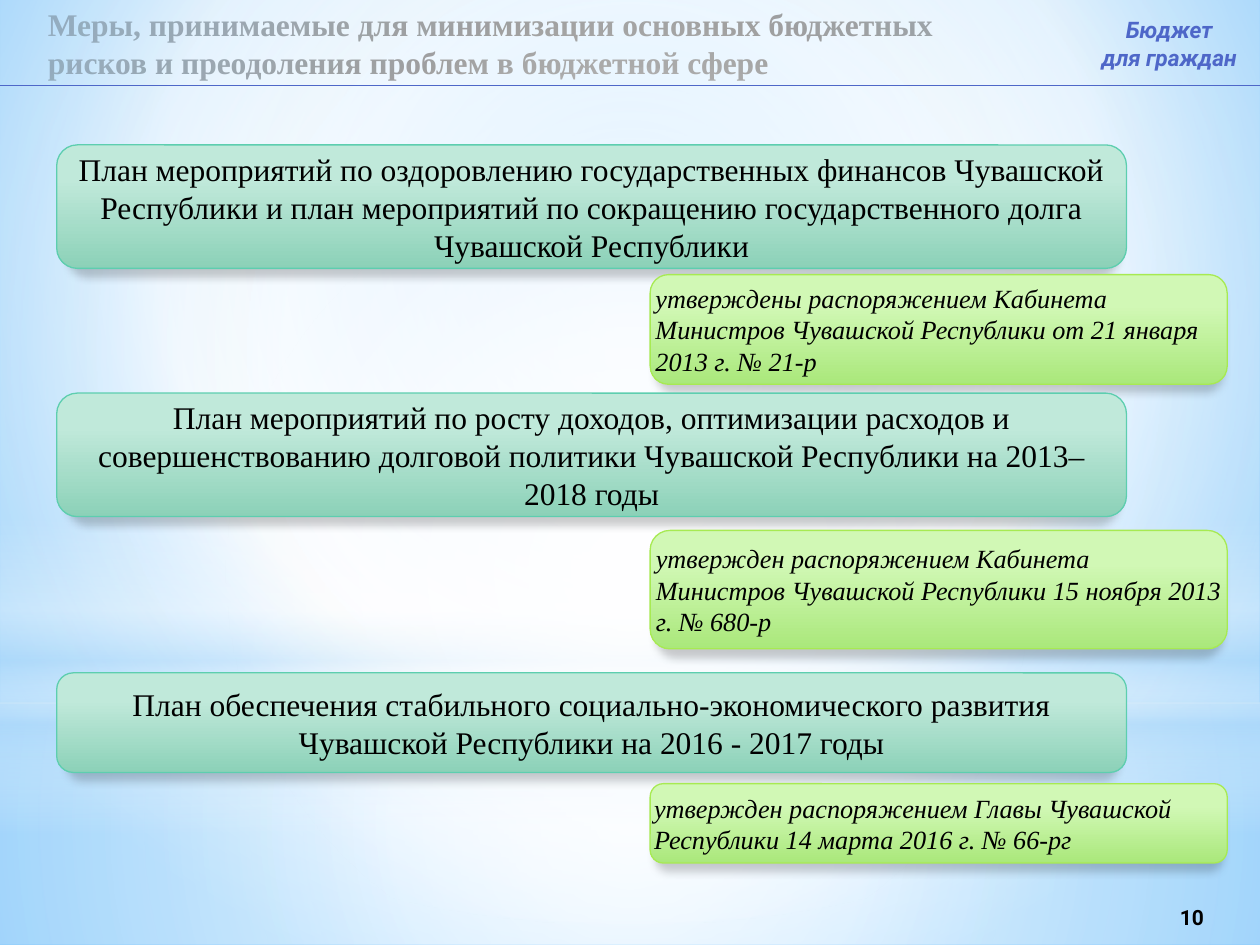
from lxml import etree
from pptx import Presentation
from pptx import util as u
from pptx.dml.color import RGBColor
from pptx.enum import shapes, text
from pptx.oxml import ns

BLACK = RGBColor(0, 0, 0)
INDIGO = RGBColor(0x4E, 0x67, 0xC8)
SKY = RGBColor(0x9E, 0xD5, 0xFF)
DEEP_SKY = RGBColor(0x5B, 0xB9, 0xFF)
WHITE = RGBColor(0xFF, 0xFF, 0xFF)
HAZE = RGBColor(0xB4, 0xDC, 0xFA)
MINT = RGBColor(0xC0, 0xE9, 0xDA)
DEEP_MINT = RGBColor(0x8C, 0xD1, 0xB8)
MINT_EDGE = RGBColor(0x5D, 0xCE, 0xAF)
LIME = RGBColor(0xD1, 0xF8, 0xB5)
DEEP_LIME = RGBColor(0xAA, 0xE8, 0x7B)
LIME_EDGE = RGBColor(0xA7, 0xEA, 0x52)

SERIF = "Times New Roman"
SANS = "Roboto"
RECT = shapes.MSO_SHAPE.RECTANGLE
ROUNDED = shapes.MSO_SHAPE.ROUNDED_RECTANGLE
OVAL = shapes.MSO_SHAPE.OVAL
CENTER = text.PP_ALIGN.CENTER
LEFT = text.PP_ALIGN.LEFT
MIDDLE = text.MSO_ANCHOR.MIDDLE
TOP = text.MSO_ANCHOR.TOP
CENTRAL = (50, 50, 50, 50)

PLAN_LEFT, PLAN_WIDTH = 0.45, 8.49
APPROVAL_LEFT, APPROVAL_WIDTH = 5.16, 4.58
MEASURES = [
    (1.15, 0.98, "План мероприятий по оздоровлению государственных финансов Чувашской "
     "Республики и план мероприятий по сокращению государственного долга Чувашской Республики",
     2.18, 0.87, "утверждены распоряжением Кабинета Министров Чувашской Республики "
     "от 21 января 2013 г. № 21-р"),
    (3.12, 0.98, "План мероприятий по росту доходов, оптимизации расходов и "
     "совершенствованию долговой политики Чувашской Республики на 2013–2018 годы",
     4.21, 0.94, "утвержден распоряжением Кабинета Министров Чувашской Республики "
     "15 ноября 2013 г. № 680-р"),
    (5.34, 0.79, "План обеспечения стабильного социально-экономического развития "
     "Чувашской Республики на 2016 - 2017 годы",
     6.22, 0.63, "утвержден распоряжением Главы Чувашской Республики "
     "14 марта 2016 г. № 66-рг"),
]


def box(*lengths):
    return [u.Inches(length) for length in lengths]


def add_xml(parent, tag, **attributes):
    return etree.SubElement(parent, ns.qn(tag), {k: str(v) for k, v in attributes.items()})


def paint_gradient(fill, owner, stops, focus=None):
    fill.gradient()
    gradient = owner.find(".//" + ns.qn("a:gradFill"))
    for child in list(gradient):
        gradient.remove(child)
    stop_list = add_xml(gradient, "a:gsLst")
    for position, color, *opacity in stops:
        stop = add_xml(stop_list, "a:gs", pos=position * 1000)
        tint = add_xml(stop, "a:srgbClr", val=color)
        if opacity:
            add_xml(tint, "a:alpha", val=opacity[0] * 1000)
    if focus:
        route = add_xml(gradient, "a:path", path="circle")
        add_xml(route, "a:fillToRect", **{k: v * 1000 for k, v in zip("ltrb", focus)})
    else:
        add_xml(gradient, "a:lin", ang=90 * 60000, scaled=0)


def add_panel(slide, kind, place, stops, focus=None):
    panel = slide.shapes.add_shape(kind, *box(*place))
    panel.shadow.inherit = False
    panel.line.fill.background()
    paint_gradient(panel.fill, panel._element, stops, focus)
    return panel


def write(shape, wording, size, font=SERIF, color=BLACK, bold=False, italic=False,
          align=LEFT, anchor=TOP, wrap=True, inset=None):
    frame = shape.text_frame
    frame.word_wrap = wrap
    frame.vertical_anchor = anchor
    if inset is not None:
        frame.margin_left = frame.margin_right = u.Inches(inset)
        frame.margin_top = frame.margin_bottom = u.Inches(inset)
    frame.text = wording
    for paragraph in frame.paragraphs:
        paragraph.alignment = align
        for run in paragraph.runs:
            run.font.name = font
            run.font.size = u.Pt(size)
            run.font.bold = bold
            run.font.italic = italic
            run.font.color.rgb = color


def add_card(slide, place, light, deep, edge, wording, size, **style):
    card = add_panel(slide, ROUNDED, place, [(28, light), (100, deep)])
    card.line.color.rgb = edge
    card.line.width = u.Pt(0.75)
    effects = card._element.spPr.find(ns.qn("a:effectLst"))
    shadow = add_xml(effects, "a:outerShdw", blurRad=u.Pt(5), dist=u.Pt(4),
                     dir=90 * 60000, sx=98000, sy=98000, rotWithShape=0)
    add_xml(add_xml(shadow, "a:srgbClr", val=BLACK), "a:alpha", val=20000)
    write(card, wording, size, anchor=MIDDLE, **style)


def add_label(slide, place, wording, size, **style):
    write(slide.shapes.add_textbox(*box(*place)), wording, size, **style)


def add_backdrop(slide):
    paint_gradient(slide.background.fill, slide._element,
                   [(0, SKY), (60, WHITE), (100, DEEP_SKY)], (20, 10, 20, 60))
    add_panel(slide, RECT, (0, 5.58, 10, 1.92),
              [(0, WHITE, 91), (37, WHITE, 76), (100, HAZE, 79)], CENTRAL)
    add_panel(slide, RECT, (0, 0, 10, 5.58),
              [(0, WHITE, 89), (48, WHITE, 62), (100, HAZE, 79)], CENTRAL)
    add_panel(slide, RECT, (0, 4.12, 10, 2.5),
              [(0, WHITE, 0), (29, WHITE, 30), (45, HAZE, 40),
               (55, WHITE, 26), (65, HAZE, 60), (100, WHITE, 0)])
    add_panel(slide, OVAL, (0, 1.75, 10, 5.58),
              [(0, WHITE, 100), (56, WHITE, 0)], CENTRAL)


def add_heading(slide):
    title = slide.shapes.title
    title.left, title.top, title.width, title.height = box(0.28, -0.01, 7.87, 0.68)
    write(title, "Меры, принимаемые для минимизации основных бюджетных рисков "
          "и преодоления проблем в бюджетной сфере", 18, bold=True)
    rule = slide.shapes.add_connector(shapes.MSO_CONNECTOR.STRAIGHT, *box(0, 0.68, 10, 0.68))
    rule.line.color.rgb = INDIGO
    rule.line.width = u.Pt(0.75)
    add_xml(rule._element.spPr, "a:effectLst")
    add_label(slide, (8.61, 0.08, 1.34, 0.54), "Бюджет\nдля граждан", 13, font=SANS,
              color=INDIGO, bold=True, italic=True, align=CENTER, wrap=False)


def main():
    deck = Presentation()
    deck.slide_width, deck.slide_height = box(10, 7.5)
    slide = deck.slides.add_slide(deck.slide_layouts[5])
    add_backdrop(slide)
    add_heading(slide)
    for plan_top, plan_height, plan, approval_top, approval_height, approval in MEASURES:
        add_card(slide, (PLAN_LEFT, plan_top, PLAN_WIDTH, plan_height),
                 MINT, DEEP_MINT, MINT_EDGE, plan, 18, align=CENTER)
        add_card(slide, (APPROVAL_LEFT, approval_top, APPROVAL_WIDTH, approval_height),
                 LIME, DEEP_LIME, LIME_EDGE, approval, 15, italic=True, inset=0)
    add_label(slide, (8.91, 7.08, 1.1, 0.4), "10", 12, font=SANS, bold=True,
              align=CENTER, anchor=MIDDLE)
    deck.save("out.pptx")


if __name__ == "__main__":
    main()
